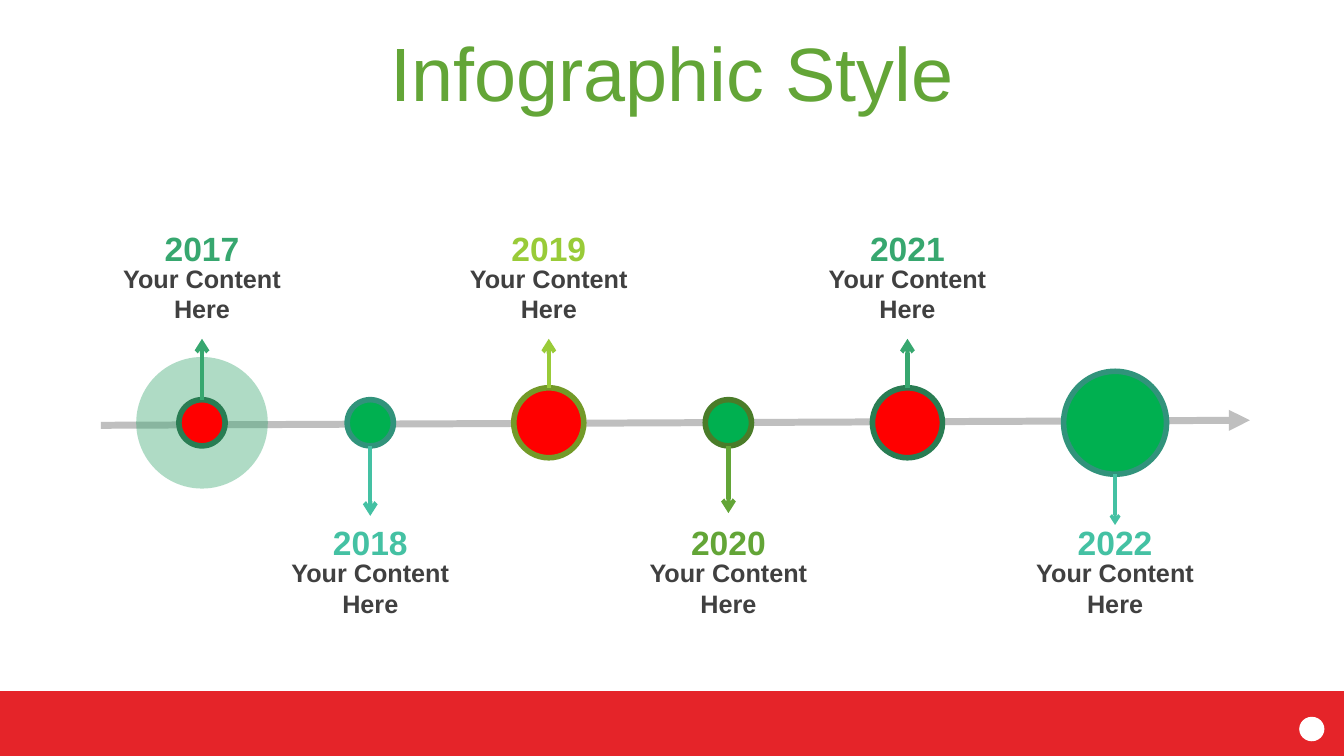
from lxml import etree
from pptx import Presentation
from pptx.dml.color import RGBColor
from pptx.enum.shapes import MSO_CONNECTOR as Connector, MSO_SHAPE as Shape
from pptx.enum.text import MSO_ANCHOR as Anchor, PP_ALIGN as Align
from pptx.oxml.ns import qn
from pptx.util import Pt

GREEN = RGBColor(0x63, 0xA5, 0x37)
LIME = RGBColor(0x99, 0xCB, 0x38)
JADE = RGBColor(0x37, 0xA7, 0x6F)
TEAL = RGBColor(0x44, 0xC1, 0xA3)
DARK_GREEN = RGBColor(0x4A, 0x7C, 0x29)
DARK_LIME = RGBColor(0x73, 0x9A, 0x28)
DARK_JADE = RGBColor(0x29, 0x7D, 0x53)
DARK_TEAL = RGBColor(0x31, 0x93, 0x7B)
RED_DOT = RGBColor(0xFF, 0x00, 0x00)
GREEN_DOT = RGBColor(0x00, 0xB0, 0x50)
FOOTER_RED = RGBColor(0xE5, 0x24, 0x29)
WHITE = RGBColor(0xFF, 0xFF, 0xFF)
GREY = RGBColor(0xBF, 0xBF, 0xBF)
TEXT_GREY = RGBColor(0x40, 0x40, 0x40)

SLIDE_W, SLIDE_H = 960, 540
AXIS_Y = 302
LABEL_W = 159
CAPTION = "Your Content Here"

# year, centre x, diameter, fill, outline, accent, arrow tip y, arrow width
MILESTONES = [
    ("2017", 144.3, 33, RED_DOT, DARK_JADE, JADE, 242, 3),
    ("2018", 264.5, 33, GREEN_DOT, DARK_TEAL, TEAL, 368.5, 3),
    ("2019", 392, 50, RED_DOT, DARK_LIME, LIME, 242, 3),
    ("2020", 520.3, 33, GREEN_DOT, DARK_GREEN, GREEN, 366.5, 3),
    ("2021", 648.2, 50, RED_DOT, DARK_JADE, JADE, 242, 3),
    ("2022", 796.5, 73.5, GREEN_DOT, DARK_TEAL, TEAL, 375, 2.25),
]


class TimelineSlide:
    def __init__(self, slide, font="Arial"):
        self.shapes = slide.shapes
        self.font = font

    def shape(self, kind, left, top, width, height, fill, outline=None, opacity=None):
        shape = self.shapes.add_shape(kind, Pt(left), Pt(top), Pt(width), Pt(height))
        shape.shadow.inherit = False
        shape.fill.solid()
        shape.fill.fore_color.rgb = fill
        if opacity is not None:
            color = shape.fill._xPr.find(qn("a:solidFill"))[0]
            etree.SubElement(color, qn("a:alpha"), val=str(opacity * 1000))
        if outline is None:
            shape.line.fill.background()
        else:
            shape.line.color.rgb = outline
            shape.line.width = Pt(4)

    def circle(self, x, y, diameter, fill, outline=None, opacity=None):
        self.shape(Shape.OVAL, x - diameter / 2, y - diameter / 2,
                   diameter, diameter, fill, outline, opacity)

    def arrow(self, start, end, color, width, head="arrow"):
        arrow = self.shapes.add_connector(
            Connector.STRAIGHT, *(Pt(value) for value in start + end))
        arrow.line.color.rgb = color
        arrow.line.width = Pt(width)
        etree.SubElement(arrow.line._get_or_add_ln(), qn("a:tailEnd"), type=head)
        etree.SubElement(arrow._element.spPr, qn("a:effectLst"))

    def text(self, words, x, top, width, height, size, color, bold=False):
        """Add text centred on x and return its frame."""
        box = self.shapes.add_textbox(Pt(x - width / 2), Pt(top), Pt(width), Pt(height))
        frame = box.text_frame
        frame.word_wrap = True
        paragraph = frame.paragraphs[0]
        paragraph.text = words
        paragraph.alignment = Align.CENTER
        paragraph.font.name = self.font
        paragraph.font.size = Pt(size)
        paragraph.font.bold = bold
        paragraph.font.color.rgb = color
        return frame

    def title(self, words):
        frame = self.text(words, SLIDE_W / 2, 26.6, 911.5, 57, 54, GREEN)
        frame.vertical_anchor = Anchor.MIDDLE
        frame.paragraphs[0].line_spacing = 0.9
        frame.paragraphs[0].space_before = Pt(10)

    def milestone(self, year, x, diameter, fill, outline, accent, tip_y, width):
        points_up = tip_y < AXIS_Y
        edge_y = AXIS_Y + (-diameter if points_up else diameter) / 2
        label_top = 159 if points_up else 369.2
        self.circle(x, AXIS_Y, diameter, fill, outline)
        self.arrow((x, edge_y), (x, tip_y), accent, width)
        self.text(year, x, label_top, LABEL_W, 36, 24, accent, True)
        self.text(CAPTION, x, label_top + 25.6, LABEL_W, 51, 18, TEXT_GREY, True)


def main():
    deck = Presentation()
    deck.slide_width, deck.slide_height = Pt(SLIDE_W), Pt(SLIDE_H)
    timeline = TimelineSlide(deck.slides.add_slide(deck.slide_layouts[6]))

    timeline.shape(Shape.RECTANGLE, 0, 493.7, SLIDE_W, SLIDE_H - 493.7, FOOTER_RED)
    timeline.shape(Shape.OVAL, 928, 512, 18, 17.5, WHITE)
    timeline.title("Infographic Style")
    timeline.arrow((72, 303.8), (892.8, 300.2), GREY, 5, "triangle")
    timeline.circle(MILESTONES[0][1], AXIS_Y, 94, JADE, opacity=40)
    for milestone in MILESTONES:
        timeline.milestone(*milestone)

    deck.save("out.pptx")


if __name__ == "__main__":
    main()
